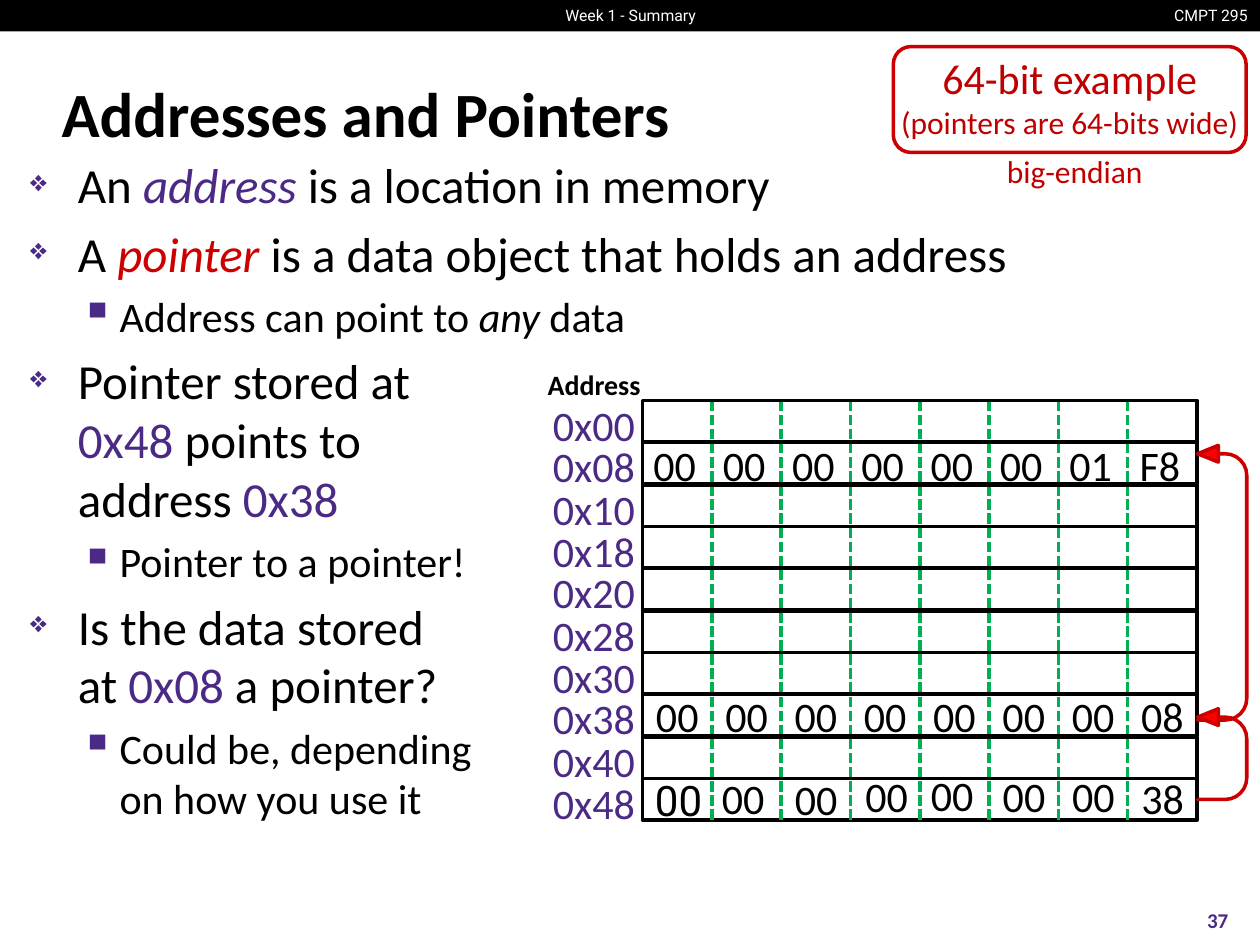
"""Build the Addresses and Pointers slide with its memory diagram."""
from lxml.etree import SubElement
from pptx import Presentation
from pptx.dml.color import RGBColor
from pptx.enum.dml import MSO_LINE
from pptx.enum.shapes import MSO_CONNECTOR, MSO_SHAPE as SHAPE
from pptx.enum.text import MSO_ANCHOR as ANCHOR, PP_ALIGN as ALIGN
from pptx.oxml.ns import qn
from pptx.util import Pt

PX = 9144
BLACK, WHITE, PURPLE, RED, DARK_RED = "000000", "FFFFFF", "4B2A85", "CC0000", "C00000"
rgb = RGBColor.from_string

presentation = Presentation()
presentation.slide_width, presentation.slide_height = 1000 * PX, 750 * PX
slide = presentation.slides.add_slide(presentation.slide_layouts[6])
shapes = slide.shapes


def write(shape, paragraphs, align=ALIGN.LEFT, anchor=ANCHOR.TOP, wrap=False, margins=(10, 5, 10, 5)):
    """Fill a shape with paragraphs, each a list of (text, size, color, font formats)."""
    frame = shape.text_frame
    frame.word_wrap, frame.vertical_anchor = wrap, anchor
    for side, margin in zip(("left", "top", "right", "bottom"), margins):
        setattr(frame, f"margin_{side}", margin * PX)
    for index, runs in enumerate(paragraphs):
        paragraph = frame.paragraphs[0] if index == 0 else frame.add_paragraph()
        paragraph.alignment = align
        for text, size, color, formats in runs:
            for number, line in enumerate(text.split("\n")):
                if number:
                    paragraph.add_line_break()
                if line:
                    run = paragraph.add_run()
                    run.text = line
                    run.font.color.rgb = rgb(color)
                    for name, value in {"name": "Calibri", "size": Pt(size), **formats}.items():
                        setattr(run.font, name, value)
    return frame


def add_box(kind, left, top, width, height, fill=None, line=None):
    """Add a preset shape with an optional fill and outline."""
    shape = shapes.add_shape(kind, left * PX, top * PX, width * PX, height * PX)
    shape.shadow.inherit = False
    if fill:
        shape.fill.solid()
        shape.fill.fore_color.rgb = rgb(fill)
    else:
        shape.fill.background()
    if line:
        shape.line.color.rgb = rgb(line)
        shape.line.width = Pt(2)
    else:
        shape.line.fill.background()
    return shape


add_box(SHAPE.RECTANGLE, 0, 0, 1000, 25, BLACK)

bold, roboto = {"bold": True}, {"name": "Roboto"}
labels = [
    ("CMPT 295", (919, 0, 81, 25), 9, WHITE, roboto, ALIGN.RIGHT, ANCHOR.TOP),
    ("Week 1 - Summary", (430, 0, 141, 25), 9, WHITE, roboto, ALIGN.CENTER, ANCHOR.TOP),
    ("Addresses and Pointers", (39, 48, 919, 83), 36, BLACK, bold, ALIGN.LEFT, ANCHOR.MIDDLE),
    ("37", (933, 710, 67, 40), 12, PURPLE, bold, ALIGN.CENTER, ANCHOR.MIDDLE),
    ("big-endian", (713, 116, 280, 40), 18, DARK_RED, {}, ALIGN.CENTER, ANCHOR.TOP),
    ("Address", (424, 287, 95, 37), 16, BLACK, bold, ALIGN.CENTER, ANCHOR.TOP),
]
for text, box, size, color, formats, align, anchor in labels:
    textbox = shapes.add_textbox(*(value * PX for value in box))
    write(textbox, [[(text, size, color, formats)]], align, anchor, wrap=size == 36)

italic = {"italic": True}
bullets = [
    (0, [("An ", BLACK, {}), ("address ", PURPLE, italic), ("is a location in memory", BLACK, {})]),
    (0, [("A ", BLACK, {}), ("pointer ", RED, italic),
         ("is a data object that holds an address", BLACK, {})]),
    (1, [("Address can point to ", BLACK, {}), ("any", BLACK, italic), (" data", BLACK, {})]),
    (0, [("Pointer stored at\n", BLACK, {}), ("0x48", PURPLE, {}),
         (" points to \naddress ", BLACK, {}), ("0x38", PURPLE, {})]),
    (1, [("Pointer to a pointer!", BLACK, {})]),
    (0, [("Is the data stored\nat ", BLACK, {}), ("0x08", PURPLE, {}), (" a pointer?", BLACK, {})]),
    (1, [("Could be, depending\non how you use it", BLACK, {})]),
]
bullet_styles = [(28, 38, 38, "❖", 60), (24, 71, 31, "▪", 110)]
body = shapes.add_textbox(14 * PX, 118 * PX, 915 * PX, 544 * PX)
frame = write(body, [[(text, bullet_styles[level][0], color, formats) for text, color, formats in runs]
                     for level, runs in bullets], wrap=True)
for paragraph, (level, runs) in zip(frame.paragraphs, bullets):
    size, indent, hanging, character, percent = bullet_styles[level]
    paragraph.level = level
    paragraph.space_before = Pt(size * 0.2)
    properties = paragraph._p.get_or_add_pPr()
    properties.set("marL", str(indent * PX))
    properties.set("indent", str(-hanging * PX))
    bullet_color = SubElement(properties, qn("a:buClr"))
    SubElement(bullet_color, qn("a:srgbClr"), val=PURPLE)
    SubElement(properties, qn("a:buSzPct"), val=str(percent * 1000))
    SubElement(properties, qn("a:buChar"), char=character)

callout = add_box(SHAPE.ROUNDED_RECTANGLE, 709, 37, 280, 84, line=RED)
write(callout, [[("64-bit example", 24, DARK_RED, {})], [("(pointers are 64-bits wide)", 18, DARK_RED, {})]],
      ALIGN.CENTER, ANCHOR.MIDDLE, margins=(0, 0, 0, 5))

ROWS, COLUMNS, GRID_LEFT, GRID_TOP, GRID_HEIGHT, CELL = 10, 8, 510, 318, 334, 55
row_offsets = [round(row * 100 / 3) for row in range(ROWS)]
for row, offset in enumerate(row_offsets):
    address = shapes.add_textbox(429 * PX, (312 + offset) * PX, 86 * PX, 50 * PX)
    write(address, [[(f"0x{row * COLUMNS:02X}", 24, PURPLE, {})]])

last_row = add_box(SHAPE.RECTANGLE, GRID_LEFT, GRID_TOP + row_offsets[-1], CELL * COLUMNS, 33, WHITE, BLACK)
write(last_row, [[("00", 24, BLACK, roboto)]], anchor=ANCHOR.MIDDLE, wrap=True)
for column in range(1, COLUMNS):
    x = (GRID_LEFT + column * CELL) * PX
    divider = shapes.add_connector(MSO_CONNECTOR.STRAIGHT, x, GRID_TOP * PX, x, (GRID_TOP + GRID_HEIGHT) * PX)
    divider.line.color.rgb = rgb("00B050")
    divider.line.width = Pt(2)
    divider.line.dash_style = MSO_LINE.SQUARE_DOT
    SubElement(divider._element.spPr, qn("a:effectLst"))
for offset in row_offsets[:-1]:
    add_box(SHAPE.RECTANGLE, GRID_LEFT, GRID_TOP + offset, CELL * COLUMNS, 33, line=BLACK)

stored_bytes = [
    (508, 349, "00 00 00 00 00 00 01 F8"),
    (510, 548, "00 00 00 00 00 00 00 08"),
]
for left, top, values in stored_bytes:
    for column, value in enumerate(values.split()):
        cell = shapes.add_textbox((left + column * CELL) * PX, top * PX, CELL * PX, 33 * PX)
        write(cell, [[(value, 24, BLACK, {})]], ALIGN.CENTER, margins=(0, 0, 0, 0))

pointer_bytes = [(563, 608, "00"), (621, 609, "00"), (677, 607, "00"), (729, 606, "00"),
                 (786, 607, "00"), (841, 607, "00"), (896, 608, "38")]
for left, top, value in pointer_bytes:
    cell = shapes.add_textbox(left * PX, top * PX, CELL * PX, 50 * PX)
    write(cell, [[(value, 24, BLACK, {})]])

for left, top, width in [(861, 443, 218), (934, 579, 72)]:
    arrow = add_box(SHAPE.U_TURN_ARROW, left, top, width, 39, "FF0000", RED)
    for index, adjustment in enumerate((0, 0.17, 0.42, 0.44, 1)):
        arrow.adjustments[index] = adjustment
    arrow.rotation = 270
    arrow._element.spPr.xfrm.set("flipV", "1")

presentation.save("out.pptx")
